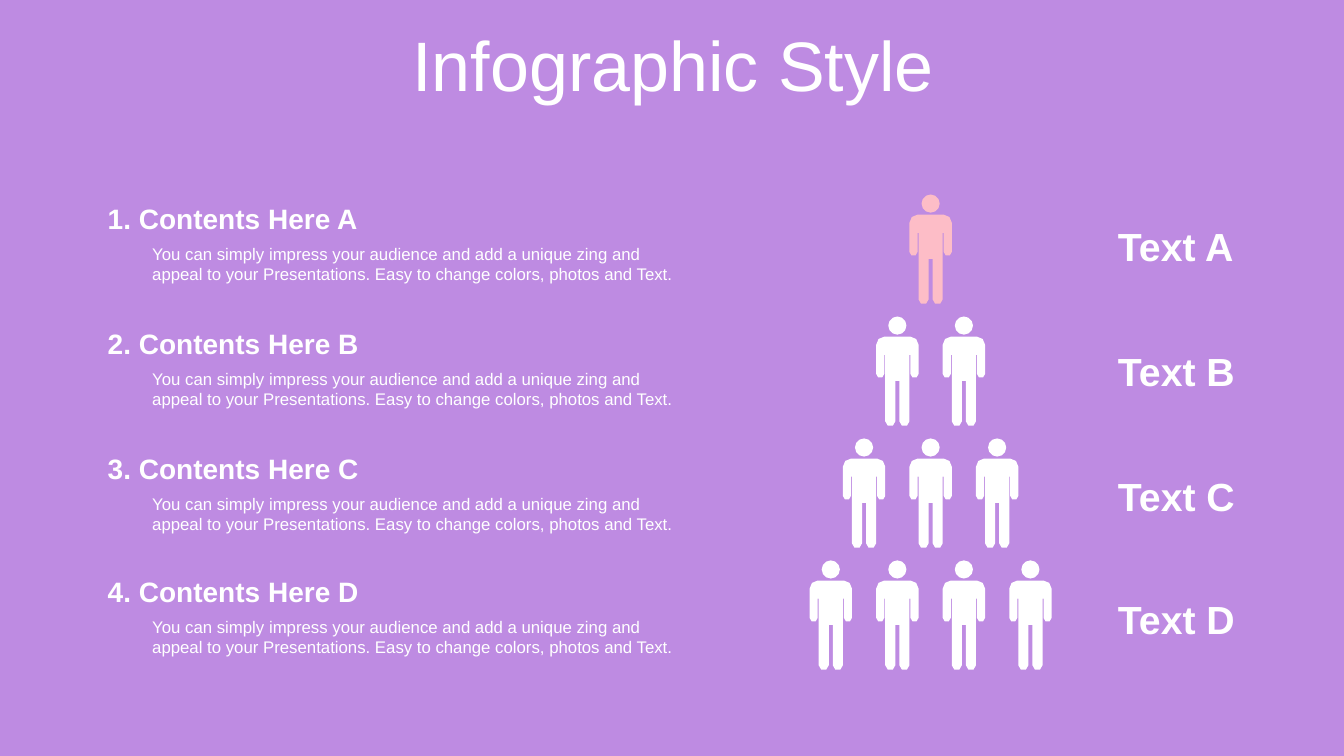
from dataclasses import dataclass
from math import cos, radians, sin

from pptx import Presentation
from pptx.dml.color import RGBColor
from pptx.enum.text import MSO_ANCHOR, MSO_AUTO_SIZE, PP_ALIGN
from pptx.util import Inches, Pt

CENTER = PP_ALIGN.CENTER
MIDDLE = MSO_ANCHOR.MIDDLE
GROW = MSO_AUTO_SIZE.SHAPE_TO_FIT_TEXT


@dataclass(frozen=True)
class Theme:
    background: RGBColor = RGBColor(0xBE, 0x8B, 0xE2)
    white: RGBColor = RGBColor(0xFF, 0xFF, 0xFF)
    accent: RGBColor = RGBColor(0xFD, 0xBD, 0xC7)
    font: str = "Arial"
    title: Pt = Pt(50)
    label: Pt = Pt(28)
    heading: Pt = Pt(20)
    body: Pt = Pt(12)


theme = Theme()


def arc(x, y, radius, start, end, steps):
    angles = [radians(start + (end - start) * i / steps) for i in range(steps + 1)]
    return [(x + radius * cos(a), y + radius * sin(a)) for a in angles]


def add_text(text, left, top, width, height, size, bold=False):
    box = slide.shapes.add_textbox(
        Inches(left), Inches(top), Inches(width), Inches(height)
    )
    frame = box.text_frame
    frame.word_wrap = True
    frame.text = text
    font = frame.paragraphs[0].font
    font.name = theme.font
    font.size = size
    font.bold = bold
    font.color.rgb = theme.white
    return frame


prs = Presentation()
prs.slide_width = Inches(13.33)
prs.slide_height = Inches(7.5)
slide = prs.slides.add_slide(prs.slide_layouts[6])
slide.background.fill.solid()
slide.background.fill.fore_color.rgb = theme.background

title = add_text("Infographic Style", 0.35, 0.31, 12.66, 0.79, theme.title)
title.vertical_anchor = MIDDLE
title.paragraphs[0].alignment = CENTER
title.paragraphs[0].line_spacing = 0.8
title.paragraphs[0].space_before = Pt(10)

shoulder = arc(0.13, 0.28, 0.08, -90, 0, 2)
hand = arc(0.17, 0.57, 0.04, 0, 180, 3)
armpit = [(0.13, 0.38), (0.12, 0.38)]
foot = arc(0.07, 1.04, 0.05, 0, 180, 3)
crotch = [(0.02, 0.64)]
right_half = shoulder + hand + armpit + foot + crotch
body = right_half + [(-x, y) for x, y in reversed(right_half)]
head = arc(0, 0.09, 0.09, 0, 360, 12)[:-1]
body, head = ([(Inches(x), Inches(y)) for x, y in part] for part in (body, head))

pyramid_center, person_pitch = 9.23, 0.66
pyramid_top, tier_pitch = 1.93, 1.21
for tier in range(4):
    for place in range(tier + 1):
        outline = slide.shapes.build_freeform(*body[0])
        outline.add_line_segments(body[1:], close=True)
        outline.move_to(*head[0])
        outline.add_line_segments(head[1:], close=True)
        person = outline.convert_to_shape(
            Inches(pyramid_center + (place - tier / 2) * person_pitch),
            Inches(pyramid_top + tier * tier_pitch),
        )
        person.shadow.inherit = False
        person.fill.solid()
        person.fill.fore_color.rgb = theme.accent if tier == 0 else theme.white
        person.line.fill.background()

description = (
    "You can simply impress your audience and add a unique zing and "
    "appeal to your Presentations. Easy to change colors, photos and Text."
)
heading_tops = [1.95, 3.19, 4.43, 5.65]
for number, (letter, top) in enumerate(zip("ABCD", heading_tops), 1):
    details = add_text(description, 1.43, top + 0.42, 5.47, 0.5, theme.body)
    details.margin_left = details.margin_right = Inches(0.08)
    heading = add_text(
        f"{number}. Contents Here {letter}", 0.97, top, 5.93, 0.44, theme.heading, True
    )
    label = add_text(f"Text {letter}", 10.99, top + 0.21, 1.43, 0.57, theme.label, True)
    for frame in (details, heading, label):
        frame.auto_size = GROW

prs.save("out.pptx")
